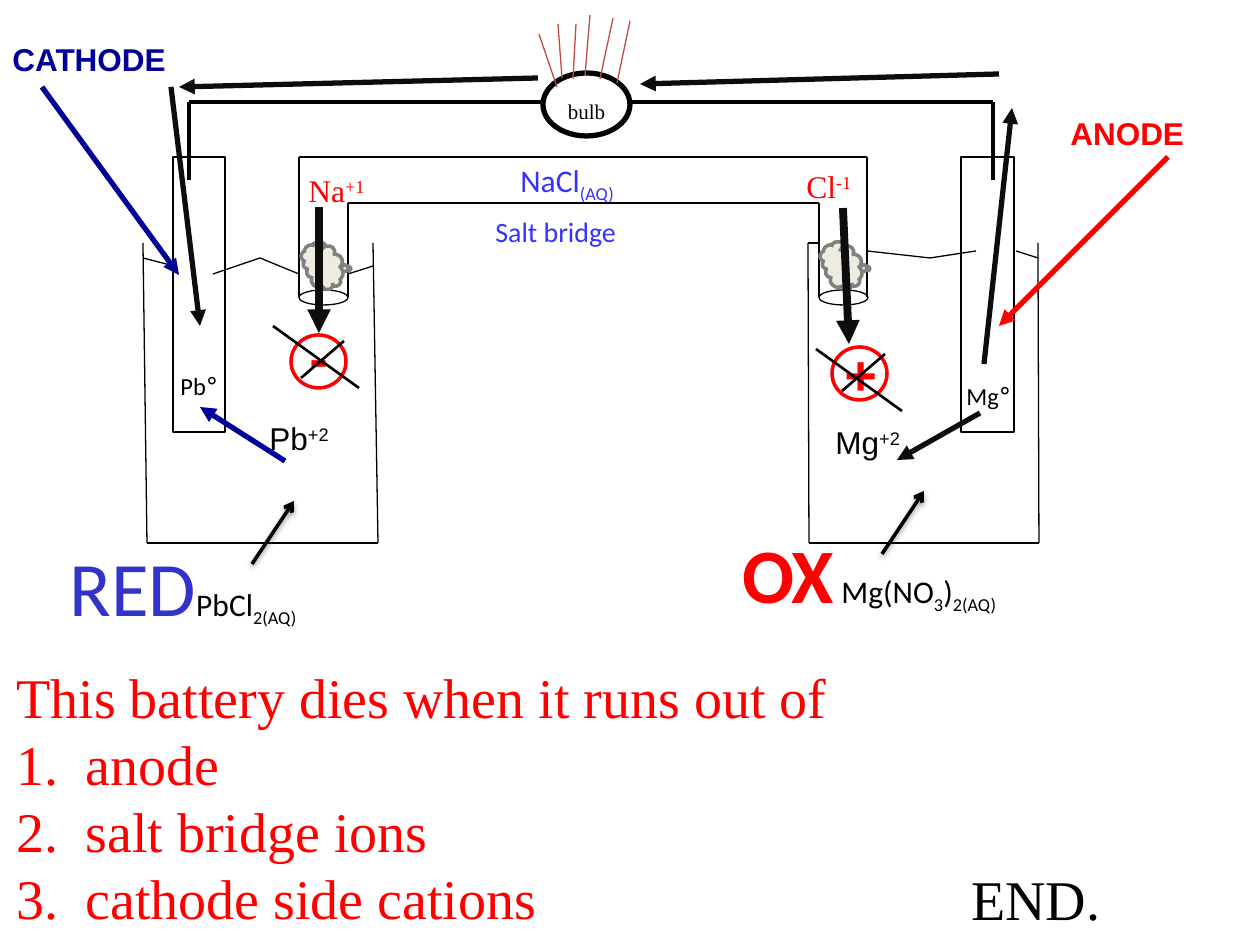
from dataclasses import dataclass
from itertools import pairwise
from lxml.etree import SubElement
from pptx import Presentation
from pptx.dml.color import RGBColor
from pptx.enum.shapes import MSO_CONNECTOR, MSO_SHAPE
from pptx.enum.text import MSO_AUTO_SIZE, PP_ALIGN
from pptx.oxml.ns import qn
from pptx.util import Emu, Pt

SCALE = 914400 / 126  # EMU in one px


@dataclass(frozen=True)
class Theme:
    black: str = "000000"
    ink: str = "0D0D0D"
    red: str = "FF0000"
    navy: str = "000099"
    blue: str = "3333FF"
    indigo: str = "3333CC"
    ray: str = "BF4C48"
    grey: str = "808080"
    cotton: str = "EEECE1"
    white: str = "FFFFFF"
    serif: str = "Times New Roman"
    sans: str = "Arial"
    body: str = "Calibri"
    symbol: str = "DejaVu Sans"
    tiny: int = 12
    small: int = 14
    medium: int = 16
    normal: int = 18
    large: int = 32
    huge: int = 44


T = Theme()

# Outlines: each is a chain of points joined by straight lines
BEAKERS = [
    [(143, 243), (147, 543), (378, 543), (373, 243)],
    [(819, 243), (808, 243), (809, 543), (1039, 543), (1038, 243)],
]
BRIDGE = [
    [(299, 297), (299, 157), (867, 157), (867, 297)],
    [(348, 297), (348, 203), (819, 203), (819, 297)],
]
WATER = [
    [(143, 258), (174, 266)],
    [(213, 274), (260, 258), (299, 274)],
    [(348, 274), (373, 266)],
    [(867, 251), (930, 258), (976, 251)],
    [(1016, 251), (1038, 258)],
]
WIRE = [[(189, 180), (189, 102), (993, 102), (993, 180)]]
RAYS = [
    [(617, 83), (630, 21)], [(600, 79), (613, 18)], [(562, 78), (558, 24)],
    [(557, 87), (539, 34)], [(573, 79), (576, 24)], [(585, 76), (590, 15)],
]
CROSSES = [
    [(273, 326), (359, 388)], [(301, 378), (344, 341)],
    [(842, 391), (885, 354)], [(816, 349), (902, 411)],
]

# Arrows: start, end, colour, width
ARROWS = [
    ((980, 413), (897, 460), T.ink, 3),
    ((984, 364), (1012, 108), T.ink, 3),
    ((999, 74), (640, 84), T.ink, 3),
    ((538, 78), (179, 87), T.ink, 3),
    ((171, 87), (200, 326), T.ink, 3),
    ((285, 461), (200, 407), T.navy, 3),
    ((42, 87), (179, 275), T.navy, 3),
    ((1168, 157), (999, 326), T.red, 3),
    ((319, 207), (319, 333), T.ink, 4.5),
    ((843, 208), (849, 344), T.ink, 4.5),
]
SOLUTION_ARROWS = [((252, 564), (294, 501)), ((882, 554), (924, 491))]

# Shapes: left, top, width, height
ELECTRODES = [(173, 157, 52, 275), (961, 157, 53, 275)]
BRIDGE_MOUTHS = [(299, 290, 49, 15), (819, 290, 49, 15)]
COTTON_PLUGS = [(299, 246, 49, 39), (818, 246, 49, 39)]
ION_RINGS = [(832, 347, 55, 53), (291, 335, 55, 53)]
BULB = (543, 73, 87, 63)

# Labels: box, font, size, colour, bold, runs of (text, changes)
SUB, SUPER = {"baseline": -25}, {"baseline": 30}
BLACK = {"color": T.black, "bold": False, "size": T.normal}
DEGREE = ("°", {"font": T.symbol})
LABELS = [
    ((168, 365, 64, 43), T.body, T.small, T.black, False, [("Pb", {}), DEGREE]),
    ((954, 375, 88, 42), T.body, T.small, T.black, False, [("Mg", {}), DEGREE]),
    ((483, 208, 210, 47), T.body, T.medium, T.blue, False, [("Salt bridge", {})]),
    ((508, 155, 132, 50), T.body, T.normal, T.blue, False, [("NaCl", {}), ("(AQ)", SUB)]),
    ((57, 533, 305, 106), T.body, T.huge, T.indigo, False,
     [("RED", {}), ("PbCl", BLACK), ("2(AQ)", BLACK | SUB)]),
    ((730, 520, 336, 106), T.body, T.huge, T.red, True,
     [("OX", {}), (" ", {"size": T.normal}), ("Mg(NO", BLACK), ("3", BLACK | SUB),
      (")", BLACK), ("2(AQ)", BLACK | SUB)]),
    ((823, 417, 107, 50), T.sans, T.normal, T.black, False, [("Mg", {}), ("+2", SUPER)]),
    ((257, 413, 107, 50), T.sans, T.normal, T.black, False, [("Pb", {}), ("+2", SUPER)]),
    ((0, 34, 186, 50), T.sans, T.normal, T.navy, True, [("CATHODE", {})]),
    ((1058, 108, 186, 50), T.sans, T.normal, T.red, True, [("ANODE", {})]),
    ((832, 333, 72, 81), T.sans, T.large, T.red, True, [("+", {})]),
    ((297, 316, 72, 81), T.sans, T.large, T.red, True, [("-", {})]),
    ((296, 165, 98, 50), T.serif, T.normal, T.red, False, [("Na", {}), ("+1", SUPER)]),
    ((794, 161, 98, 50), T.serif, T.normal, T.red, False, [("Cl", {}), ("-1", SUPER)]),
    ((959, 858, 200, 81), T.serif, T.large, T.black, False, [("END.", {})]),
]
SUMMARY_BOX = (4, 656, 940, 285)
SUMMARY = "This battery dies when it runs out of"
REASONS = ["anode", "salt bridge ions", "cathode side cations"]
NUMBER_INDENT = 69

deck = Presentation()
deck.slide_width, deck.slide_height = Emu(round(1260 * SCALE)), Emu(round(945 * SCALE))
page = deck.slides.add_slide(deck.slide_layouts[6])


def px(*lengths):
    return [Emu(round(length * SCALE)) for length in lengths]


def add_line(start, end, color=T.black, width=0.75, head=None, shadow=False):
    line = page.shapes.add_connector(MSO_CONNECTOR.STRAIGHT, *px(*start, *end))
    line.line.color.rgb = RGBColor.from_string(color)
    line.line.width = Pt(width)
    if head:
        SubElement(line.line._get_or_add_ln(), qn("a:tailEnd"), type=head)
    effects = SubElement(line._element.spPr, qn("a:effectLst"))
    if shadow:
        outer = SubElement(effects, qn("a:outerShdw"), blurRad="40000", dist="20000",
                           dir="5400000", rotWithShape="0")
        tint = SubElement(outer, qn("a:srgbClr"), val=T.black)
        SubElement(tint, qn("a:alpha"), val="38000")


def add_chains(chains, color=T.black, width=0.75):
    for chain in chains:
        for start, end in pairwise(chain):
            add_line(start, end, color, width)


def add_outline(kind, frame, color=T.black, width=0.75, fill=None, rotation=0):
    shape = page.shapes.add_shape(kind, *px(*frame))
    shape.shadow.inherit = False
    shape.rotation = rotation
    shape.line.color.rgb = RGBColor.from_string(color)
    shape.line.width = Pt(width)
    if fill:
        shape.fill.solid()
        shape.fill.fore_color.rgb = RGBColor.from_string(fill)
    else:
        shape.fill.background()


def add_box(frame):
    box = page.shapes.add_textbox(*px(*frame))
    box.text_frame.word_wrap = True
    box.text_frame.auto_size = MSO_AUTO_SIZE.SHAPE_TO_FIT_TEXT
    return box.text_frame


def add_span(para, text, font, size, color, bold=False, baseline=0):
    span = para.add_run()
    span.text = text
    span.font.name, span.font.size, span.font.bold = font, Pt(size), bold
    span.font.color.rgb = RGBColor.from_string(color)
    if baseline:
        span.font._element.set("baseline", str(baseline * 1000))


# Cells, salt bridge and wire
add_chains(BEAKERS + BRIDGE + WATER)
for frame in ELECTRODES:
    add_outline(MSO_SHAPE.RECTANGLE, frame)
for frame in BRIDGE_MOUTHS:
    add_outline(MSO_SHAPE.OVAL, frame)
for frame in COTTON_PLUGS:
    add_outline(MSO_SHAPE.CLOUD_CALLOUT, frame, T.grey, 2, T.cotton, 254.3)
add_chains(WIRE, width=2)

# Bulb
add_outline(MSO_SHAPE.OVAL, BULB, width=3, fill=T.white)
bulb_text = add_box((559, 93, 55, 32))
bulb_text.margin_left = bulb_text.margin_right = bulb_text.margin_top = bulb_text.margin_bottom = px(5)[0]
bulb_text.paragraphs[0].alignment = PP_ALIGN.CENTER
add_span(bulb_text.paragraphs[0], "bulb", T.serif, T.tiny, T.black)
add_chains(RAYS, T.ray)

# Labels
for frame, font, size, color, bold, spans in LABELS:
    para = add_box(frame).paragraphs[0]
    for text, changes in spans:
        add_span(para, text, **({"font": font, "size": size, "color": color, "bold": bold} | changes))

# Numbered summary
summary = add_box(SUMMARY_BOX)
add_span(summary.paragraphs[0], SUMMARY, T.serif, T.large, T.red)
for reason in REASONS:
    para = summary.add_paragraph()
    indent = px(NUMBER_INDENT)[0]
    properties = para._p.get_or_add_pPr()
    properties.set("marL", str(indent))
    properties.set("indent", str(-indent))
    SubElement(properties, qn("a:buFont"), typeface=T.serif)
    SubElement(properties, qn("a:buAutoNum"), type="arabicPeriod")
    add_span(para, reason, T.serif, T.large, T.red)

# Arrows and crossed-out ions
for start, end in SOLUTION_ARROWS:
    add_line(start, end, width=2, head="arrow", shadow=True)
for start, end, color, width in ARROWS:
    add_line(start, end, color, width, "triangle")
for frame in ION_RINGS:
    add_outline(MSO_SHAPE.OVAL, frame, T.red, 2)
add_chains(CROSSES, width=1.5)

deck.save("out.pptx")
